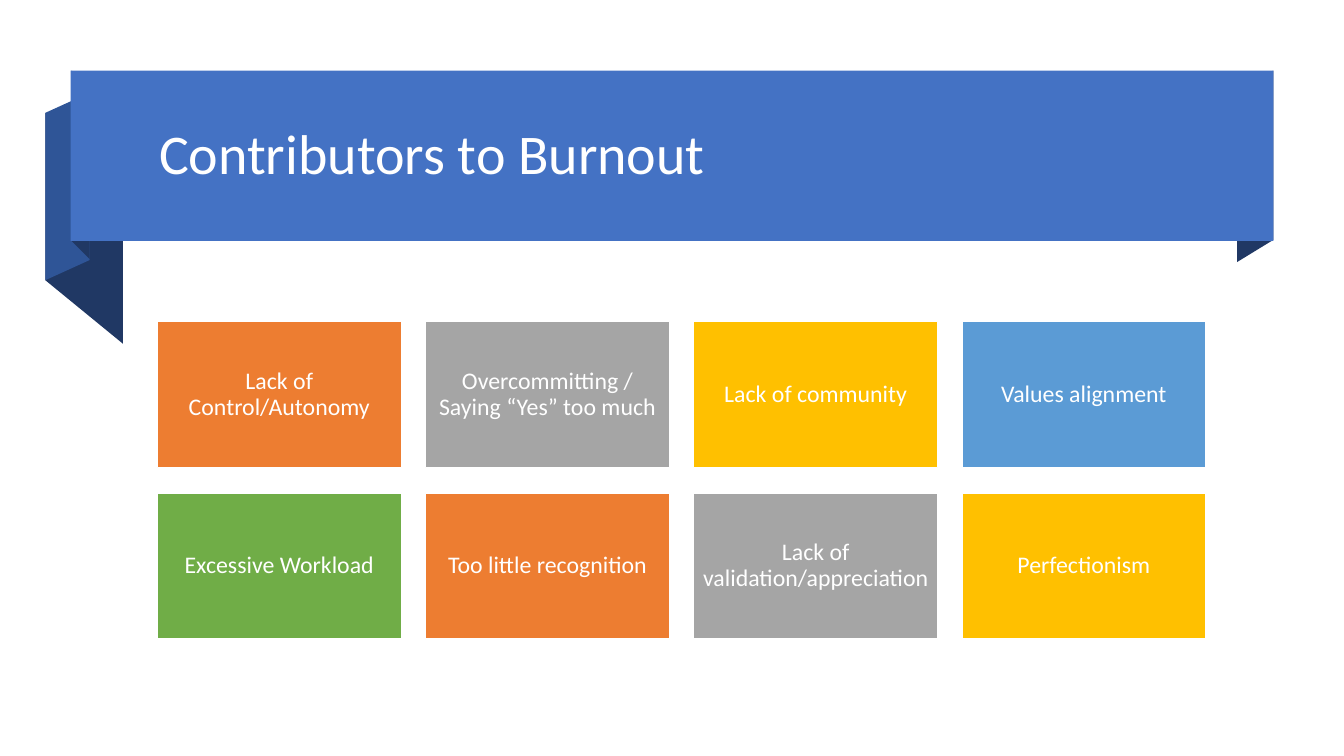
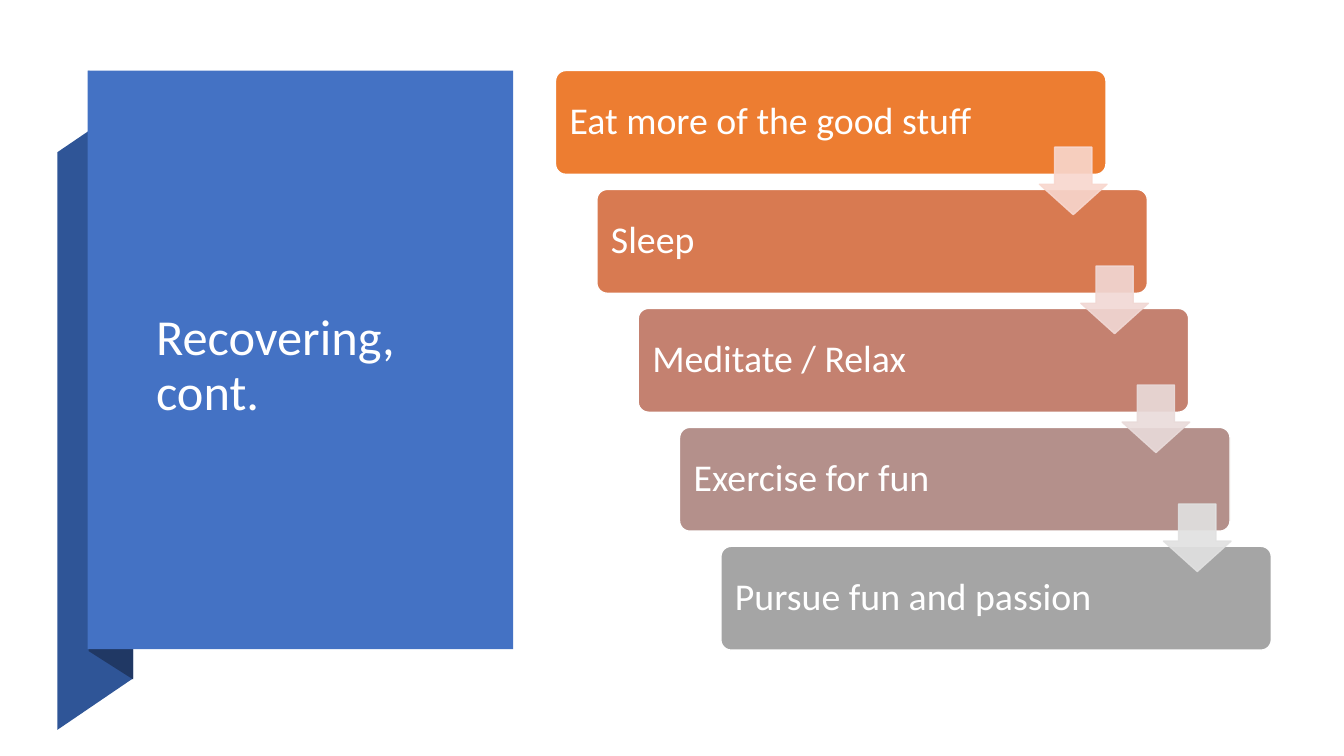
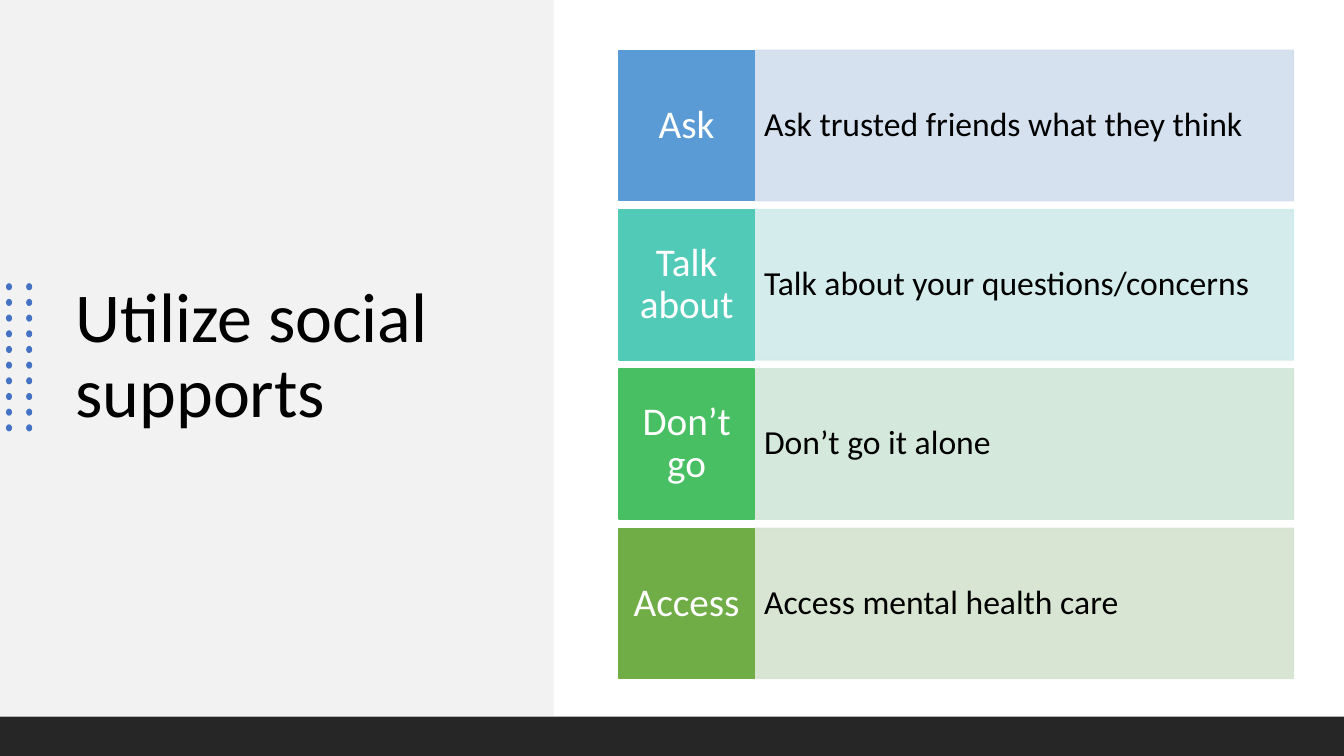
from lxml.etree import SubElement
from pptx import Presentation
from pptx.dml.color import RGBColor
from pptx.enum.shapes import MSO_SHAPE
from pptx.enum.text import MSO_ANCHOR, PP_ALIGN
from pptx.oxml.ns import qn
from pptx.util import Inches, Pt

FONT = "Calibri"
WHITE, BLACK = "FFFFFF", "000000"
BLUE, MID_BLUE, NAVY = "4472C4", "2F5597", "203864"
ORANGE, GRAY, GOLD = "ED7D31", "A5A5A5", "FFC000"
SKY, GREEN = "5B9BD5", "70AD47"
RECTANGLE = MSO_SHAPE.RECTANGLE


def paint(surface, colour):
    surface.solid()
    surface.fore_color.rgb = RGBColor.from_string(colour)


def draw(page, kind, outline, fill=None, line=None, opacity=100, adjust=(),
         text="", size=18, colour=WHITE, align=PP_ALIGN.LEFT, inset=(0.1, 0.05)):
    if kind == "title":
        box = page.shapes.add_textbox(*map(Inches, outline))
    elif kind == "fold":
        points = [(Inches(x), Inches(y)) for x, y in outline]
        builder = page.shapes.build_freeform(*points[0])
        builder.add_line_segments(points[1:])
        box = builder.convert_to_shape()
    else:
        box = page.shapes.add_shape(kind, *map(Inches, outline))
    if fill:
        box.shadow.inherit = False
        paint(box.fill, fill)
        if line:
            paint(box.line.fill, line)
            box.line.width = Pt(1)
        else:
            box.line.fill.background()
    for index, value in enumerate(adjust):
        box.adjustments[index] = value
    if opacity < 100:
        for node in box.element.spPr.iter(qn("a:srgbClr")):
            SubElement(node, qn("a:alpha"), val=str(opacity * 1000))
    if text:
        side, end = map(Inches, inset)
        frame = box.text_frame
        para = frame.paragraphs[0]
        span = para.add_run()
        formats = (
            (frame, {"word_wrap": True, "vertical_anchor": MSO_ANCHOR.MIDDLE,
                     "margin_left": side, "margin_right": side,
                     "margin_top": end, "margin_bottom": end}),
            (para, {"alignment": align, "line_spacing": 0.9}),
            (span, {"text": text}),
            (span.font, {"name": FONT, "size": Pt(size)}),
        )
        for target, values in formats:
            for name, value in values.items():
                setattr(target, name, value)
        paint(span.font.fill, colour)


deck = Presentation()
deck.slide_width, deck.slide_height = Inches(13.33), Inches(7.5)
burnout, recovery, supports = [deck.slides.add_slide(deck.slide_layouts[6]) for _ in range(3)]

ribbons = (
    (burnout, (
        (NAVY, ((12.63, 2.38), (12.27, 2.6), (12.27, 0.91), (12.63, 0.7))),
        (NAVY, ((1.22, 3.41), (0.45, 2.78), (0.45, 1.12), (1.22, 1.75))),
        (MID_BLUE, ((0.89, 2.58), (0.45, 2.78), (0.45, 1.12), (0.89, 0.92))),
        (NAVY, ((0.89, 2.57), (0.71, 2.39), (0.71, 0.7), (0.89, 0.89))),
    ), RECTANGLE, (0.7, 0.7, 11.93, 1.69), BLUE),
    (recovery, (
        (MID_BLUE, ((0.57, 7.24), (1.32, 6.73), (1.32, 1), (0.57, 1.51))),
        (NAVY, ((0.88, 6.46), (1.32, 6.74), (1.32, 0.99), (0.88, 0.7))),
    ), RECTANGLE, (0.87, 0.7, 4.22, 5.74), BLUE),
    (supports, (), RECTANGLE, (0, 0, 5.49, 7.1), "F2F2F2"),
)
for page, folds, kind, band, fill in ribbons:
    for shade, points in folds:
        draw(page, "fold", points, shade)
    draw(page, kind, band, fill)

titles = (
    (burnout, "Contributors to Burnout", (1.48, 0.83, 10.94, 1.45), 40, WHITE),
    (recovery, "Recovering, cont.", (1.45, 1.67, 3.01, 3.94), 36, WHITE),
    (supports, "Utilize social supports", (0.65, 1.32, 4.24, 4.45), 50, BLACK),
)
for page, text, place, size, colour in titles:
    draw(page, "title", place, text=text, size=size, colour=colour)

contributors = (
    ("Lack of Control/Autonomy", ORANGE),
    ("Overcommitting / Saying “Yes” too much", GRAY),
    ("Lack of community", GOLD),
    ("Values alignment", SKY),
    ("Excessive Workload", GREEN),
    ("Too little recognition", ORANGE),
    ("Lack of validation/appreciation", GRAY),
    ("Perfectionism", GOLD),
)
for index, (text, fill) in enumerate(contributors):
    row, column = divmod(index, 4)
    draw(burnout, RECTANGLE, (1.56 + 2.66 * column, 3.19 + 1.7 * row, 2.42, 1.45), fill,
         line=WHITE, text=text, size=17, align=PP_ALIGN.CENTER, inset=(0.07, 0.07))

steps = (
    ("Eat more of the good stuff", ORANGE),
    ("Sleep", "D87A51"),
    ("Meditate / Relax", "C48170"),
    ("Exercise for fun", "B4908B"),
    ("Pursue fun and passion", GRAY),
)
for index, (text, fill) in enumerate(steps):
    draw(recovery, MSO_SHAPE.ROUNDED_RECTANGLE,
         (5.51 + 0.41 * index, 0.7 + 1.18 * index, 5.46, 1.03), fill,
         line=WHITE, adjust=(0.1,), text=text, size=27, inset=(0.11, 0.11))

for index, fill in enumerate(("F8D7CE", "F1D8D4", "E9DBDA", "E1E1E1")):
    draw(recovery, MSO_SHAPE.DOWN_ARROW,
         (10.31 + 0.41 * index, 1.46 + 1.18 * index, 0.67, 0.67), fill,
         line=fill, opacity=90, adjust=(0.55, 0.45))

for row in range(10):
    for left in (0.06, 0.26):
        draw(supports, MSO_SHAPE.OVAL, (left, 2.81 + 1.4 / 9 * row, 0.06, 0.07), BLUE)
draw(supports, RECTANGLE, (0, 7.11, 13.33, 0.39), "262626")

actions = (
    ("Ask", SKY, "Ask trusted friends what they think", "D2DEEF"),
    ("Talk about", "52CAB8", "Talk about your questions/concerns", "D0ECEA"),
    ("Don’t go", "49BF64", "Don’t go it alone", "D0E7D8"),
    ("Access", GREEN, "Access mental health care", "D5E3CF"),
)
for index, (label, fill, detail, tint) in enumerate(actions):
    top = 0.5 + 1.58 * index
    draw(supports, RECTANGLE, (7.48, top, 5.35, 1.49), tint, line=tint, opacity=90,
         text=detail, size=24, colour=BLACK, inset=(0.1, 0.38))
    draw(supports, RECTANGLE, (6.14, top, 1.34, 1.49), fill, line=fill,
         text=label, size=28, align=PP_ALIGN.CENTER, inset=(0.07, 0.15))

deck.save("out.pptx")
